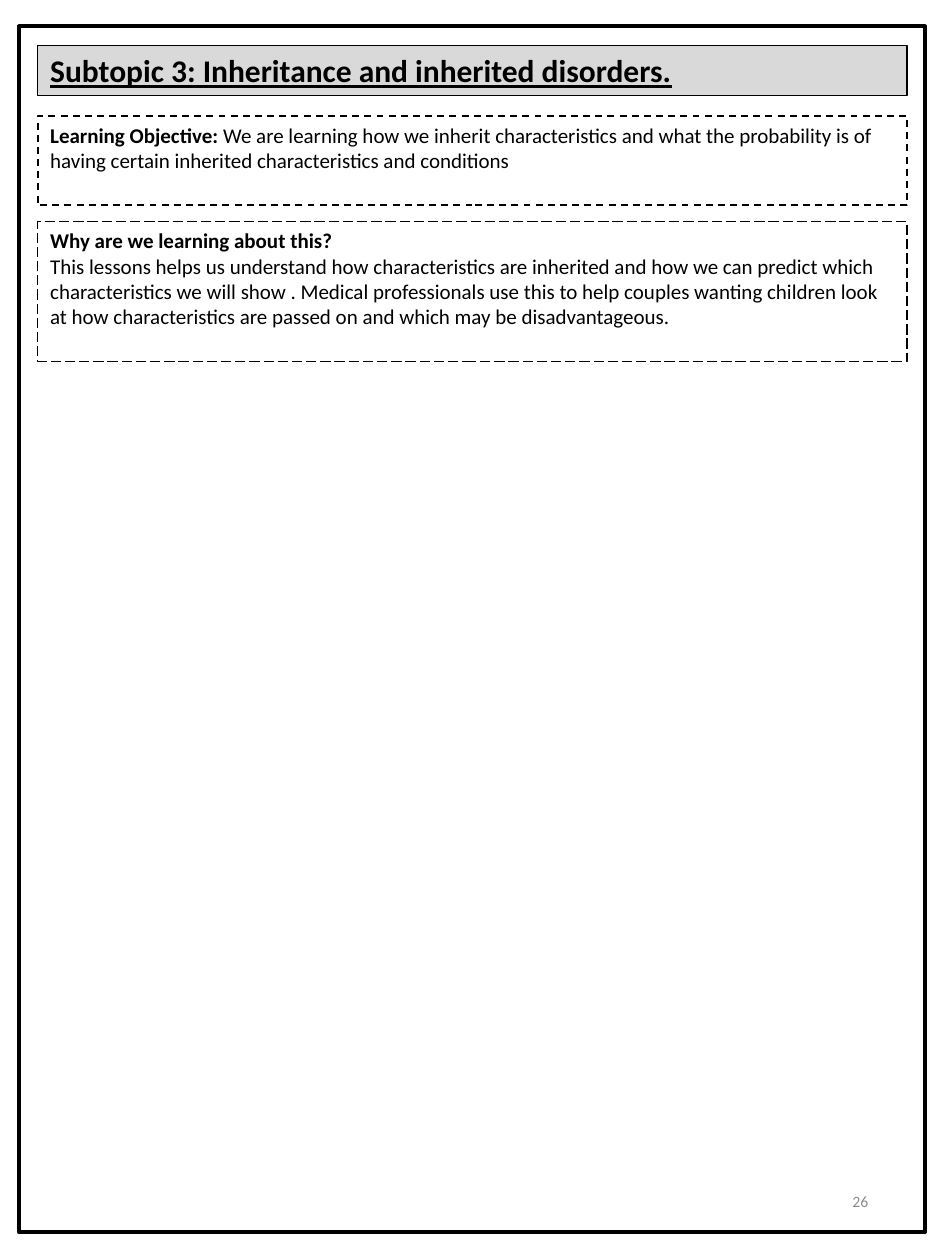
import pptx
import pptx.util
import pptx.dml.color
import pptx.enum.dml
import pptx.enum.shapes
import pptx.enum.text

Inches = pptx.util.Inches
Pt = pptx.util.Pt
Dash = pptx.enum.dml.MSO_LINE
Align = pptx.enum.text.PP_ALIGN
Anchor = pptx.enum.text.MSO_ANCHOR

COLORS = {"ink": "000000", "banner": "D9D9D9", "number": "8C8C8C"}
MARGIN, CONTENT_WIDTH = 0.3, 6.9


def color(name):
    return pptx.dml.color.RGBColor.from_string(COLORS[name])


def apply_format(target, values):
    for attribute, value in values.items():
        setattr(target, attribute, value)


def write(frame, paragraphs, size, ink="ink", align=Align.LEFT, anchor=Anchor.TOP):
    apply_format(frame, {"word_wrap": True, "vertical_anchor": anchor})
    for index, runs in enumerate(paragraphs):
        paragraph = frame.paragraphs[0] if index == 0 else frame.add_paragraph()
        paragraph.alignment = align
        for words, style in runs:
            run = paragraph.add_run()
            run.text = words
            apply_format(run.font, {"name": "Calibri", "size": Pt(size), **style})
            run.font.color.rgb = color(ink)


def add_panel(slide, box, weight, dash=Dash.SOLID, fill=None):
    panel = slide.shapes.add_shape(
        pptx.enum.shapes.MSO_SHAPE.RECTANGLE, *map(Inches, box))
    panel.shadow.inherit = False
    if fill:
        panel.fill.solid()
        panel.fill.fore_color.rgb = color(fill)
    else:
        panel.fill.background()
    panel.line.color.rgb = color("ink")
    apply_format(panel.line, {"width": Pt(weight), "dash_style": dash})
    return panel.text_frame


def add_banner(slide, box, heading):
    banner = add_panel(slide, box, 0.75, fill="banner")
    write(banner, [[(heading, {"bold": True, "underline": True})]], 18)


def add_objective(slide, box):
    objective = add_panel(slide, box, 1, Dash.DASH)
    write(objective, [[
        ("Learning Objective: ", {"bold": True}),
        ("We are learning how we inherit characteristics and what the "
         "probability is of having certain inherited characteristics and "
         "conditions", {"bold": False}),
    ]], 12)


def add_reason(slide, box):
    reason = add_panel(slide, box, 0.75, Dash.LONG_DASH)
    write(reason, [
        [("Why are we learning about this?", {"bold": True})],
        [("This lessons helps us understand how characteristics are inherited "
          "and how we can predict which characteristics we will show . Medical "
          "professionals use this to help couples wanting children look at how "
          "characteristics are passed on and which may be disadvantageous.",
          {"bold": False})],
    ], 12)


def add_page_number(slide, box, number):
    page_number = slide.shapes.add_textbox(*map(Inches, box))
    write(page_number.text_frame, [[(number, {})]], 9, "number",
          Align.RIGHT, Anchor.MIDDLE)


def main():
    booklet = pptx.Presentation()
    apply_format(booklet, {"slide_width": Inches(7.5), "slide_height": Inches(10)})
    slide = booklet.slides.add_slide(booklet.slide_layouts[6])
    add_panel(slide, (0.15, 0.21, 7.19, 9.57), 2.25)
    add_objective(slide, (MARGIN, 0.92, CONTENT_WIDTH, 0.71))
    add_reason(slide, (MARGIN, 1.76, CONTENT_WIDTH, 1.11))
    add_banner(slide, (MARGIN, 0.36, CONTENT_WIDTH, 0.4),
               "Subtopic 3: Inheritance and inherited disorders.")
    add_page_number(slide, (5.3, 9.27, 1.69, 0.53), "26")
    booklet.save("out.pptx")


if __name__ == "__main__":
    main()
